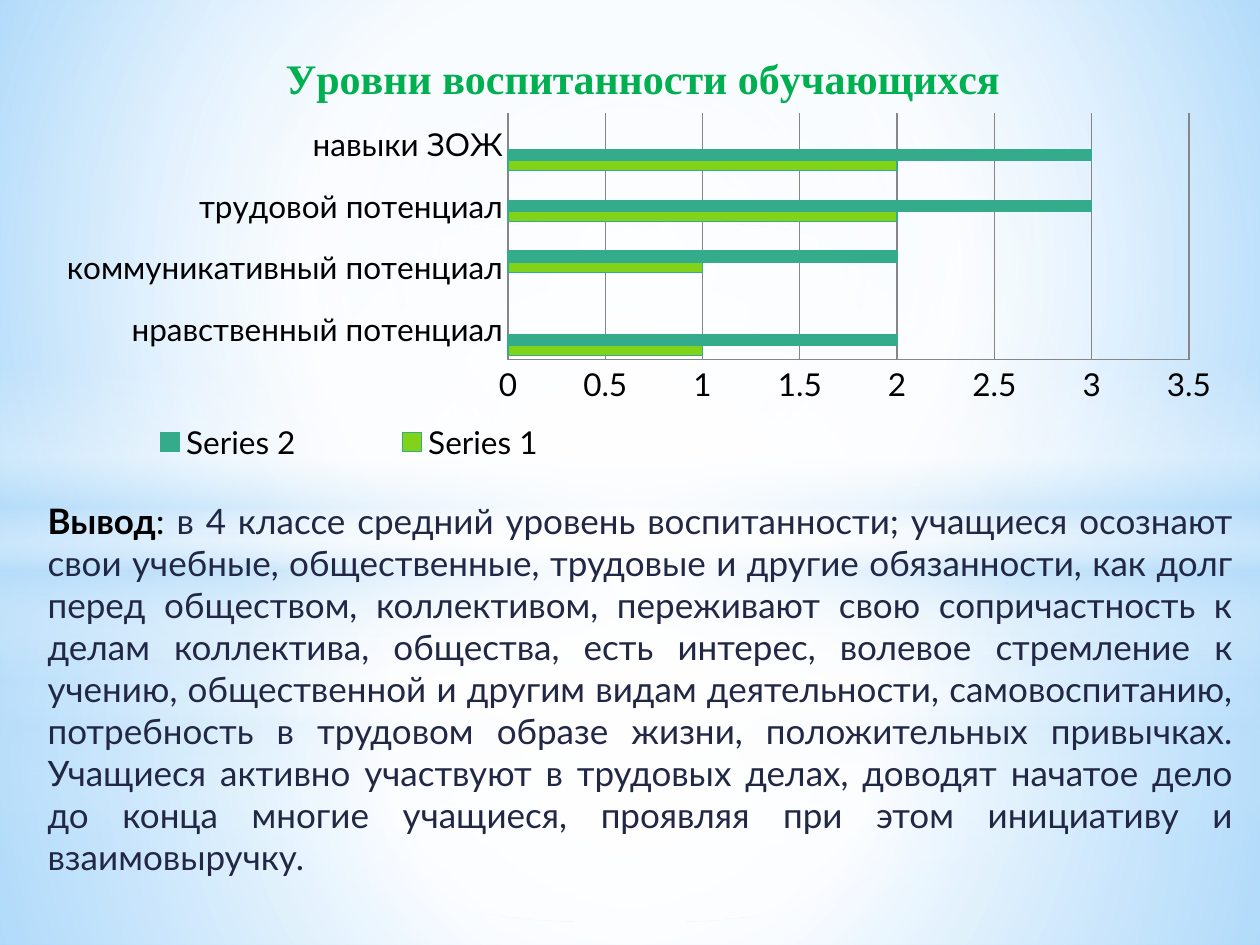
from lxml import etree
from pptx import Presentation
from pptx.chart.data import CategoryChartData
from pptx.dml.color import RGBColor
from pptx.enum.chart import XL_CHART_TYPE, XL_LEGEND_POSITION, XL_TICK_MARK
from pptx.enum.shapes import MSO_SHAPE
from pptx.enum.text import MSO_ANCHOR, MSO_AUTO_SIZE, PP_ALIGN
from pptx.oxml import parse_xml
from pptx.oxml.ns import nsdecls, qn
from pptx.util import Pt

PX = 914400 // 126
WIDTH, HEIGHT = 1260, 945
BAR = XL_CHART_TYPE.BAR_CLUSTERED
BOTTOM = XL_LEGEND_POSITION.BOTTOM
NO_TICK = XL_TICK_MARK.NONE
RECTANGLE, OVAL = MSO_SHAPE.RECTANGLE, MSO_SHAPE.OVAL
JUSTIFY, TOP, NO_FIT = PP_ALIGN.JUSTIFY, MSO_ANCHOR.TOP, MSO_AUTO_SIZE.NONE

COLORS = {
    "white": "FFFFFF", "haze": "B4DCFA", "sky": "9ED5FF", "blue": "5BB9FF",
    "black": "000000", "ink": "212745", "title": "00B050",
    "start": "81D31A", "end": "34AC8B", "grid": "868686",
}
CENTER = (50, 50, 50, 50)
CHART_BOX = (35, 16, 1201, 456)
CATEGORIES = ["нравственный потенциал", "коммуникативный потенциал",
              "трудовой потенциал", "навыки ЗОЖ"]
SERIES = [
    ("Series 1", (1, None, None, 2), "start", None),
    ("Series 2", (2, None, 2, 3), "end", 2),
    ("Series 3", (None, 1, 3, None), "end", 1),
    ("конец года", (None, 2, None, None), "end", None),
    ("начало года", (None, None, None, None), "start", None),
]
HIDDEN_LEGEND_ENTRIES = 3
TITLE = "Уровни воспитанности обучающихся"
CONCLUSION = [
    ("Вывод", "black", True),
    (": ", "black", False),
    ("в 4 классе средний уровень воспитанности; учащиеся осознают свои учебные, "
     "общественные, трудовые и другие обязанности, как долг перед обществом, "
     "коллективом, переживают свою сопричастность к делам коллектива, общества, "
     "есть интерес, волевое стремление к учению, общественной и другим видам "
     "деятельности, самовоспитанию, потребность в трудовом образе жизни, "
     "положительных привычках. Учащиеся активно участвуют в трудовых делах, "
     "доводят начатое дело до конца многие учащиеся, проявляя при этом "
     "инициативу и взаимовыручку.", "ink", False),
]


def rgb(name):
    """Return a named colour."""
    return RGBColor.from_string(COLORS[name])


def scaled(*lengths):
    """Turn px lengths into EMU."""
    return [length * PX for length in lengths]


def set_gradient(properties, stops, focus=None):
    """Replace an empty fill by a gradient, radial when a focus is given."""
    gradient = parse_xml(f'<a:gradFill {nsdecls("a")} rotWithShape="1"/>')
    stop_list = etree.SubElement(gradient, qn("a:gsLst"))
    for place, name, opacity in stops:
        stop = etree.SubElement(stop_list, qn("a:gs"), pos=str(place * 1000))
        color = etree.SubElement(stop, qn("a:srgbClr"), val=COLORS[name])
        etree.SubElement(color, qn("a:alpha"), val=str(opacity * 1000))
    if focus:
        circle = etree.SubElement(gradient, qn("a:path"), path="circle")
        sides = {side: str(value * 1000) for side, value in zip("ltrb", focus)}
        etree.SubElement(circle, qn("a:fillToRect"), **sides)
    else:
        etree.SubElement(gradient, qn("a:lin"), ang="5400000", scaled="0")
    properties.replace(properties.find(qn("a:noFill")), gradient)


def add_glow(slide, kind, top, height, stops, focus=CENTER):
    """Add a full-width shape with a gradient fill."""
    shape = slide.shapes.add_shape(kind, *scaled(0, top, WIDTH, height))
    shape.shadow.inherit = False
    shape.line.fill.background()
    shape.fill.background()
    set_gradient(shape.element.spPr, stops, focus)


def add_scenery(slide, horizon, band_top, extra, edge):
    """Add ground, sky, a hazy band and a central light."""
    ground = [(0, "white", 91 + extra), (37, "white", 76 + extra), (100, "haze", 79 + extra)]
    sky = [(0, "white", 89 + extra), (48, "white", 62 + extra), (100, "haze", 79 + extra)]
    band = [(0, "white", 0), (29, "white", 30), (45, "haze", 40),
            (55, "white", 26), (65, "haze", 60), (100, "white", 0)]
    light = [(0, "white", 100), (edge, "white", 0)]
    add_glow(slide, RECTANGLE, horizon, HEIGHT - horizon, ground)
    add_glow(slide, RECTANGLE, 0, horizon, sky)
    add_glow(slide, RECTANGLE, band_top, 315, band, None)
    add_glow(slide, OVAL, 220, 703, light)


def set_background(slide):
    """Give the slide its radial background."""
    slide.background.fill.background()
    stops = [(0, "sky", 100), (60, "white", 100), (100, "blue", 100)]
    set_gradient(slide.element.find(".//" + qn("p:bgPr")), stops, (20, 10, 20, 60))


def set_layout(part, index, left, top, size=None):
    """Fix a chart part at a slide position in px."""
    for old in part.findall(qn("c:layout")):
        part.remove(old)
    layout = parse_xml(f'<c:layout {nsdecls("c")}/>')
    manual = etree.SubElement(layout, qn("c:manualLayout"))
    if part.tag == qn("c:plotArea"):
        etree.SubElement(manual, qn("c:layoutTarget"), val="inner")
    chart_left, chart_top, chart_width, chart_height = CHART_BOX
    values = {"xMode": "edge", "yMode": "edge",
              "x": (left - chart_left) / chart_width, "y": (top - chart_top) / chart_height}
    if size:
        values.update(w=size[0] / chart_width, h=size[1] / chart_height)
    for name, value in values.items():
        etree.SubElement(manual, qn("c:" + name), val=str(value))
    part.insert(index, layout)


def paint_bar(bar, name):
    """Fill a series or a point and outline it thinly."""
    bar.format.fill.solid()
    bar.format.fill.fore_color.rgb = rgb(name)
    bar.format.line.color.rgb = rgb("end")
    bar.format.line.width = Pt(0.75)


def style_font(font, size, name, color, bold=False):
    """Set the look of a font."""
    font.size, font.name, font.bold = Pt(size), name, bold
    font.color.rgb = rgb(color)


def style_axes(chart):
    """Remove ticks and colour the axis lines and grid."""
    value_axis = chart.value_axis
    value_axis.minimum_scale, value_axis.maximum_scale = 0, 3.5
    value_axis.major_unit = 0.5
    lines = [value_axis.major_gridlines.format.line]
    for axis in (value_axis, chart.category_axis):
        axis.major_tick_mark = axis.minor_tick_mark = NO_TICK
        lines.append(axis.format.line)
    for line in lines:
        line.color.rgb = rgb("grid")
        line.width = Pt(0.75)


def add_levels_chart(slide):
    """Add the bar chart of levels with its title and legend."""
    data = CategoryChartData()
    data.categories = CATEGORIES
    for name, values, _, _ in SERIES:
        data.add_series(name, values)
    chart = slide.shapes.add_chart(BAR, *scaled(*CHART_BOX), data).chart
    style_font(chart.font, 18, "Lato", "black")
    plot = chart.plots[0]
    plot.gap_width, plot.vary_by_categories = 75, False
    for series, (_, _, color, start_point) in zip(plot.series, SERIES):
        paint_bar(series, color)
        if start_point is not None:
            paint_bar(series.points[start_point], "start")
    style_axes(chart)

    chart.has_title = True
    para = chart.chart_title.text_frame.paragraphs[0]
    para.text = TITLE
    style_font(para.font, 24, "Times New Roman", "title", True)
    chart.has_legend = True
    chart.legend.position = BOTTOM
    chart.legend.include_in_layout = False
    legend = chart.element.find(".//" + qn("c:legend"))
    for index in range(HIDDEN_LEGEND_ENTRIES):
        entry = parse_xml(f'<c:legendEntry {nsdecls("c")}><c:idx val="{index}"/>'
                          '<c:delete val="1"/></c:legendEntry>')
        legend.insert(index + 1, entry)

    set_layout(chart.element.find(".//" + qn("c:title")), 1, 278, 44)
    set_layout(chart.element.find(".//" + qn("c:plotArea")), 0, 508, 113, (681, 247))
    set_layout(legend, HIDDEN_LEGEND_ENTRIES + 1, 64, 418, (570, 48))


def fill_conclusion(body):
    """Place the body text and bring it to the front."""
    body.left, body.top, body.width, body.height = scaled(35, 493, 1211, 426)
    frame = body.text_frame
    frame.word_wrap, frame.auto_size, frame.vertical_anchor = True, NO_FIT, TOP
    para = frame.paragraphs[0]
    properties = para._p.get_or_add_pPr()
    properties.set("marL", "0")
    properties.set("indent", "0")
    etree.SubElement(properties, qn("a:buNone"))
    para.alignment, para.space_before, para.space_after = JUSTIFY, Pt(0), Pt(3)
    para.font.size, para.font.name = Pt(20), "Lato"
    for text, color, bold in CONCLUSION:
        span = para.add_run()
        span.text = text
        span.font.bold = bold
        span.font.color.rgb = rgb(color)
    body.element.getparent().append(body.element)


def main():
    """Build the slide and save the deck."""
    deck = Presentation()
    deck.slide_width, deck.slide_height = scaled(WIDTH, HEIGHT)
    page = deck.slides.add_slide(deck.slide_layouts[1])
    title, body = page.placeholders
    title.element.getparent().remove(title.element)
    set_background(page)
    add_scenery(page, horizon=703, band_top=519, extra=0, edge=56)
    add_scenery(page, horizon=533, band_top=365, extra=1, edge=54)
    fill_conclusion(body)
    add_levels_chart(page)
    deck.save("out.pptx")


if __name__ == "__main__":
    main()
